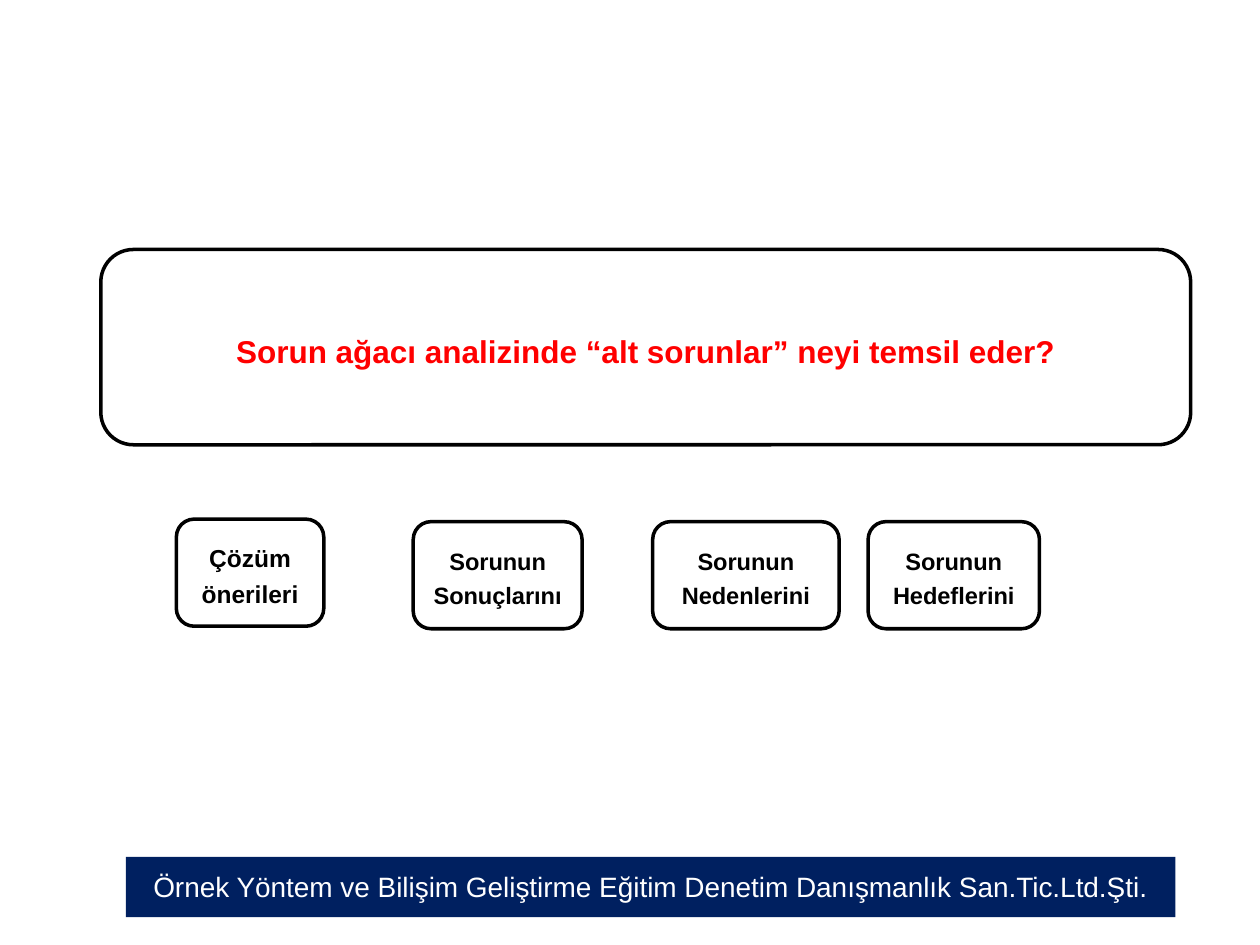
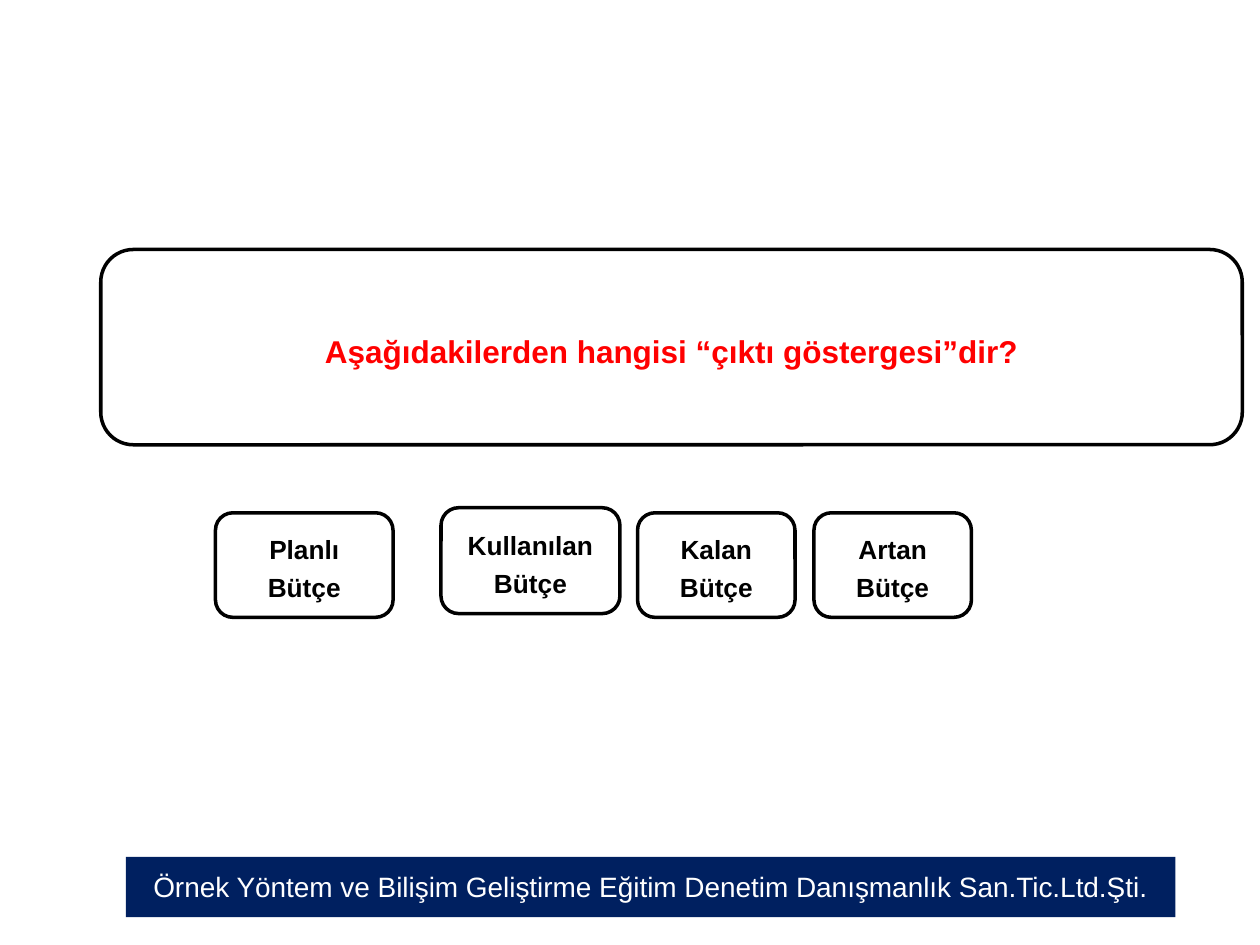
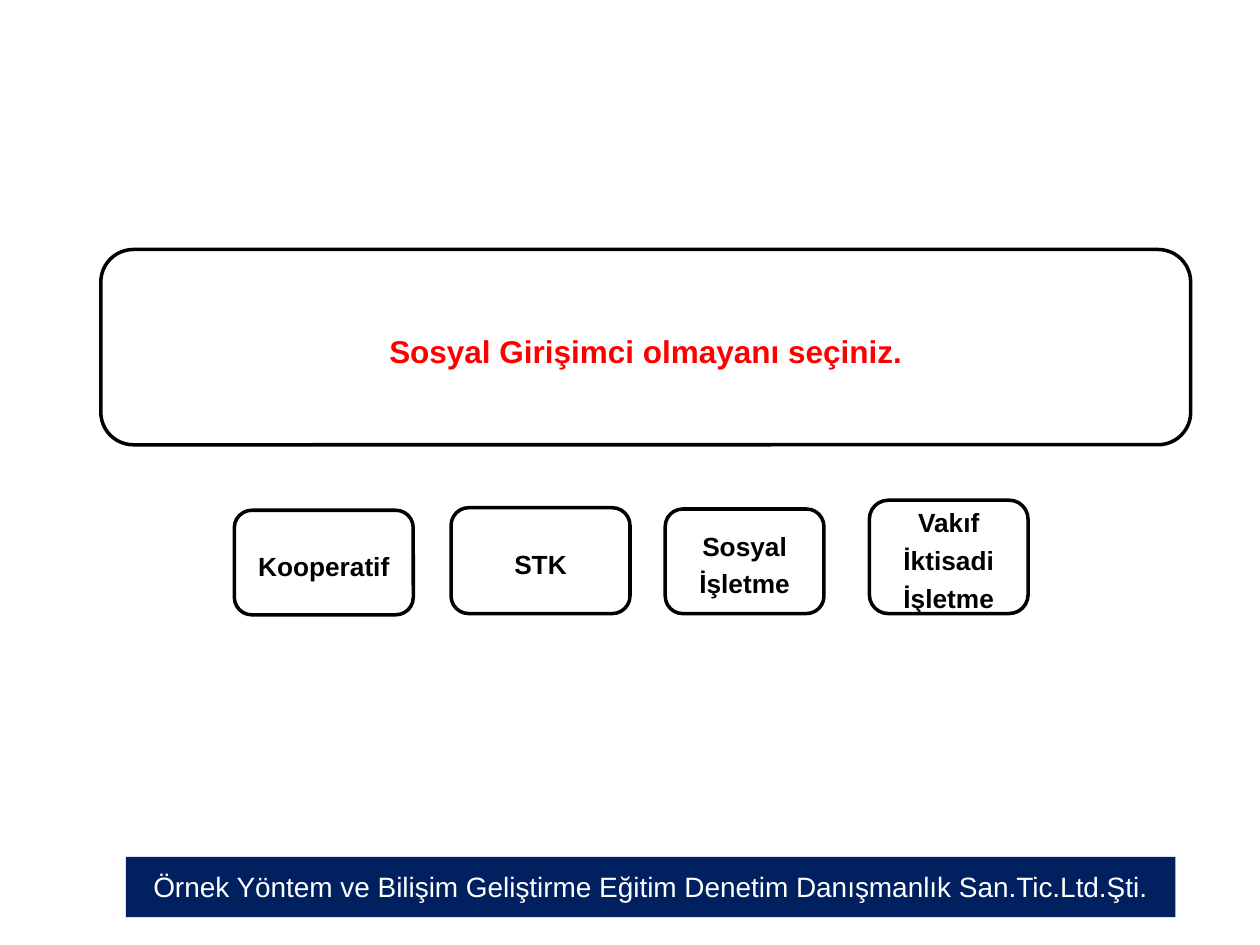
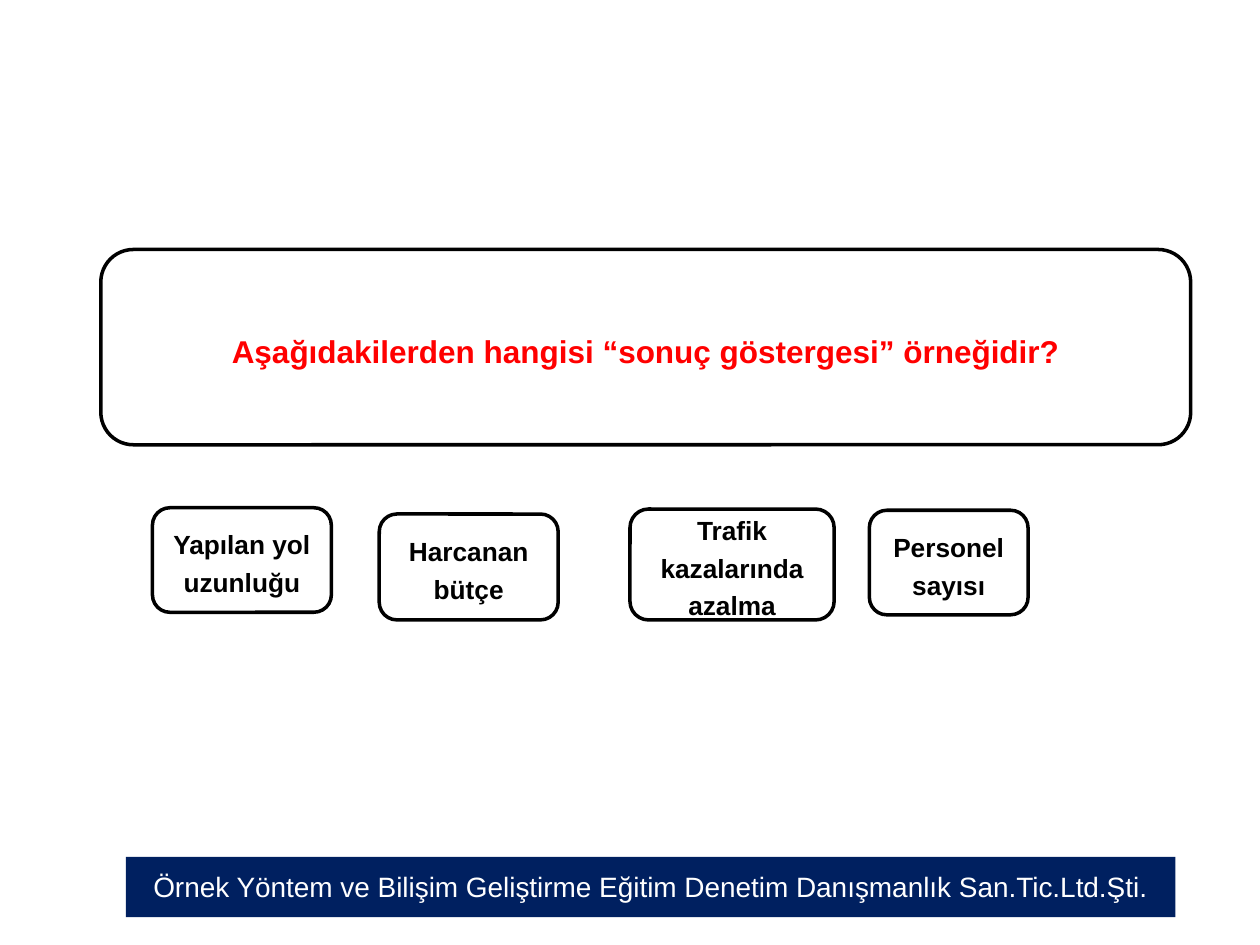
from pptx import Presentation, util as u
from pptx.dml.color import RGBColor
from pptx.enum import shapes, text

# Shared style
FONT = "Arial"
NAVY, RED, BLACK, WHITE = "002060", "FF0000", "000000", "FFFFFF"
FOOTER = "Örnek Yöntem ve Bilişim Geliştirme Eğitim Denetim Danışmanlık San.Tic.Ltd.Şti."
FOOTER_BOX = (1, 6.8, 8.33, 0.48)
QUESTION_LEFT, QUESTION_TOP, QUESTION_H = 0.8, 1.98, 1.55
QUESTION_W, WIDE_W = 8.65, 9.06

# Each question: wording, box width, answers as (wording, size, left, top, width, height)
QUESTIONS = [
    ("Sorun ağacı analizinde “alt sorunlar” neyi temsil eder?", QUESTION_W, [
        ("Çözüm önerileri", 14, 1.4, 4.12, 1.17, 0.85),
        ("Sorunun Sonuçlarını", 13.5, 3.28, 4.14, 1.34, 0.85),
        ("Sorunun Nedenlerini", 13.5, 5.18, 4.14, 1.48, 0.85),
        ("Sorunun Hedeflerini", 13.5, 6.89, 4.14, 1.36, 0.85),
    ]),
    ("Aşağıdakilerden hangisi “çıktı göstergesi”dir?", WIDE_W, [
        ("Planlı Bütçe", 15, 1.71, 4.07, 1.41, 0.83),
        ("Kullanılan Bütçe", 15, 3.5, 4.03, 1.42, 0.84),
        ("Kalan Bütçe", 15, 5.06, 4.07, 1.25, 0.83),
        ("Artan Bütçe", 15, 6.46, 4.07, 1.25, 0.83),
    ]),
    ("Sosyal Girişimci olmayanı seçiniz.", QUESTION_W, [
        ("Kooperatif", 15, 1.86, 4.05, 1.42, 0.83),
        ("STK", 15, 3.58, 4.03, 1.42, 0.84),
        ("Sosyal İşletme", 15, 5.28, 4.04, 1.26, 0.83),
        ("Vakıf İktisadi İşletme", 15, 6.9, 3.97, 1.26, 0.9),
    ]),
    ("Aşağıdakilerden hangisi “sonuç göstergesi” örneğidir?", QUESTION_W, [
        ("Yapılan yol uzunluğu", 15, 1.21, 4.03, 1.42, 0.83),
        ("Harcanan bütçe", 15, 3.01, 4.08, 1.42, 0.84),
        ("Trafik kazalarında azalma", 15, 5, 4.04, 1.62, 0.88),
        ("Personel sayısı", 15, 6.9, 4.05, 1.26, 0.83),
    ]),
]


def color(hex_code):
    return RGBColor.from_string(hex_code)


def add_box(s, kind, box, fill, words, size, ink, bold, anchor, outline=None):
    sp = s.shapes.add_shape(kind, *map(u.Inches, box))
    sp.shadow.inherit = False
    sp.fill.solid()
    sp.fill.fore_color.rgb = color(fill)
    if outline:
        sp.line.color.rgb = color(outline)
        sp.line.width = u.Pt(2)
    else:
        sp.line.fill.background()
    tf = sp.text_frame
    tf.word_wrap = True
    tf.vertical_anchor = anchor
    p = tf.paragraphs[0]
    p.alignment = text.PP_ALIGN.CENTER
    p.line_spacing = 1.2
    r = p.add_run()
    r.text = words
    r.font.name, r.font.size, r.font.bold = FONT, u.Pt(size), bold
    r.font.color.rgb = color(ink)


def add_footer(s):
    add_box(s, shapes.MSO_SHAPE.RECTANGLE, FOOTER_BOX, NAVY, FOOTER, 16, WHITE,
            False, text.MSO_ANCHOR.TOP)


def add_card(s, box, words, size, ink):
    add_box(s, shapes.MSO_SHAPE.ROUNDED_RECTANGLE, box, WHITE, words, size, ink,
            True, text.MSO_ANCHOR.MIDDLE, BLACK)


def main():
    prs = Presentation()
    prs.slide_width, prs.slide_height = u.Inches(10), u.Inches(7.5)
    for question, width, answers in QUESTIONS:
        s = prs.slides.add_slide(prs.slide_layouts[6])
        add_footer(s)
        add_card(s, (QUESTION_LEFT, QUESTION_TOP, width, QUESTION_H), question, 18, RED)
        for answer, size, *box in answers:
            add_card(s, box, answer, size, BLACK)
    prs.save("out.pptx")


if __name__ == "__main__":
    main()
